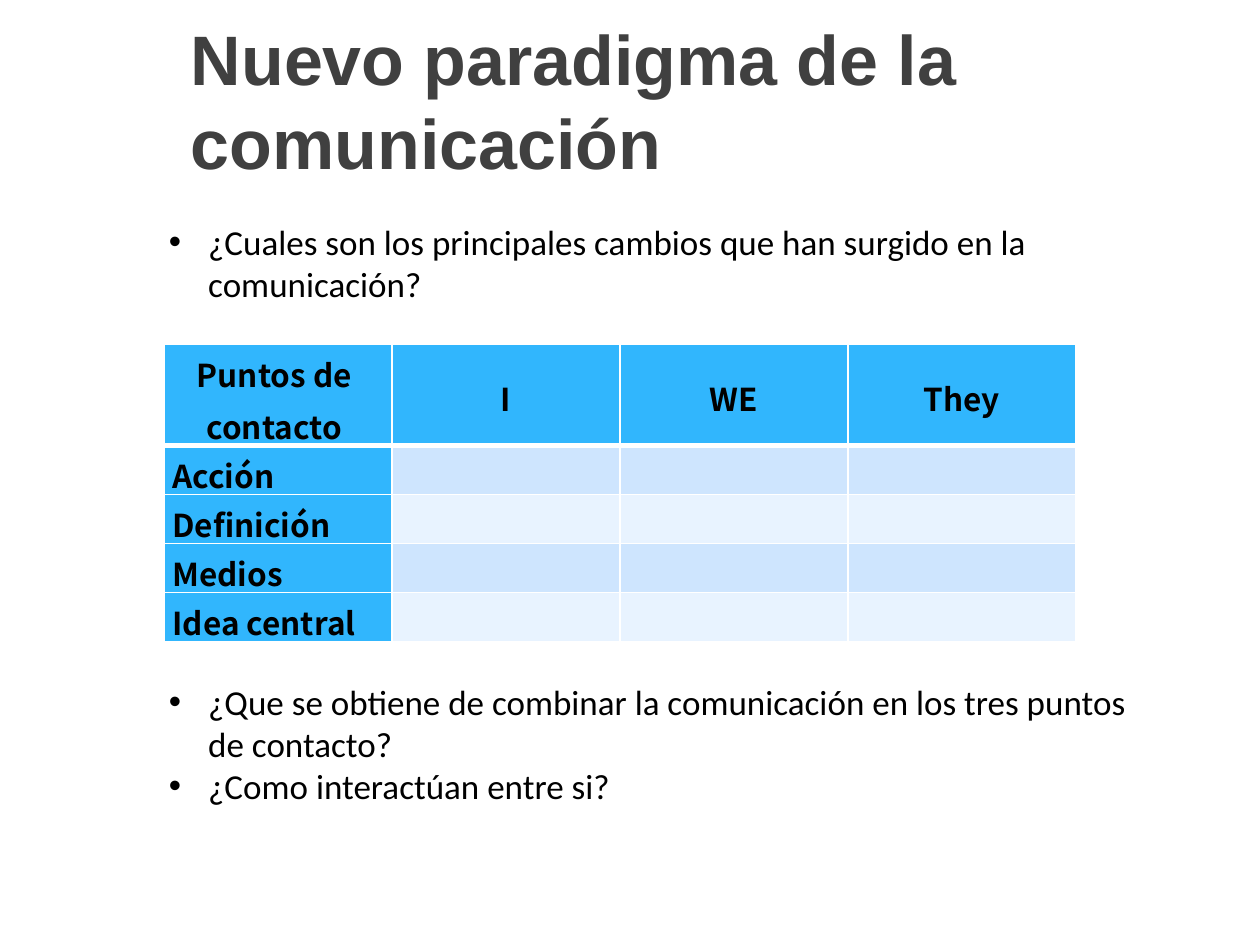
from lxml.etree import SubElement as Sub
from pptx import Presentation as Deck
from pptx.dml.color import RGBColor as Rgb
from pptx.enum.text import MSO_ANCHOR as Anchor, PP_ALIGN as Align
from pptx.oxml.ns import qn
from pptx.util import Pt

WHITE = Rgb(0xFF, 0xFF, 0xFF)
BLACK = Rgb(0, 0, 0)
GREY = Rgb(0x40, 0x40, 0x40)
BLUE = Rgb(0x31, 0xB6, 0xFD)
BANDS = Rgb(0xCE, 0xE5, 0xFE), Rgb(0xE8, 0xF3, 0xFF)

TITLE = ["Nuevo paradigma de la ", "comunicación"]
ASKS = [
    ("¿Cuales son los principales cambios que han surgido en la comunicación?", 0),
    ("¿Que se obtiene de combinar la comunicación en los tres puntos de contacto?", 215),
    ("¿Como interactúan entre si?", 0),
]
HEADS = ["Puntos de \ncontacto ", "I", "WE", "They"]
ROWS = ["Acción", "Definición", "Medios", "Idea central"]


def add_run(para, text, face, size, color, bold=False):
    """Add one styled run to a paragraph."""
    run = para.add_run()
    run.text = text
    font = run.font
    font.name, font.size, font.bold = face, Pt(size), bold
    font.color.rgb = color


def add_box(slide, left, top, width, height):
    """Add a wrapping text box and return its frame."""
    box = slide.shapes.add_textbox(Pt(left), Pt(top), Pt(width), Pt(height))
    box.text_frame.word_wrap = True
    return box.text_frame


def add_title(slide, left, top, width, height):
    """Place the two-line title."""
    frame = add_box(slide, left, top, width, height)
    frame.vertical_anchor = Anchor.MIDDLE
    para = frame.paragraphs[0]
    para.line_spacing = Pt(48)
    for i, line in enumerate(TITLE):
        if i:
            para.add_line_break()
        add_run(para, line, "Arial", 40, GREY, True)


def add_asks(slide, left, top, width, height):
    """Place the bulleted questions, leaving room for the table."""
    frame = add_box(slide, left, top, width, height)
    frame.margin_left = Pt(31)
    for i, (text, gap) in enumerate(ASKS):
        para = frame.add_paragraph() if i else frame.paragraphs[0]
        props = para._p.get_or_add_pPr()
        props.set("marL", str(Pt(22.5)))
        props.set("indent", str(-Pt(22.5)))
        if gap:
            para.space_before = Pt(gap)
        Sub(props, qn("a:buFont"), typeface="Arial")
        Sub(props, qn("a:buChar"), char="•")
        add_run(para, text, "Calibri", 20, BLACK)


def set_edges(cell, base):
    """Draw white borders, with the given width at the bottom."""
    props = cell._tc.get_or_add_tcPr()
    for side, width in zip("LRTB", (1, 1, 1, base)):
        line = Sub(props, qn("a:ln" + side), w=str(Pt(width)))
        fill = Sub(line, qn("a:solidFill"))
        Sub(fill, qn("a:srgbClr"), val=str(WHITE))


def fill_cell(cell, text, color, head):
    """Style one cell and write its lines."""
    set_edges(cell, 3 if head else 1)
    cell.fill.solid()
    cell.fill.fore_color.rgb = color
    cell.margin_left = cell.margin_right = Pt(5)
    cell.margin_top = cell.margin_bottom = 0
    cell.vertical_anchor = Anchor.MIDDLE if head else Anchor.TOP
    if not text:
        return
    frame = cell.text_frame
    for i, line in enumerate(text.split("\n")):
        para = frame.add_paragraph() if i else frame.paragraphs[0]
        para.alignment = Align.CENTER if head else Align.LEFT
        para.line_spacing = 1.15
        add_run(para, line, "Noto Sans CJK KR", 18, BLACK, True)


def add_grid(slide, left, top, width, height):
    """Place the table of contact points."""
    grid = [HEADS] + [[name, "", "", ""] for name in ROWS]
    table = slide.shapes.add_table(
        len(grid), len(HEADS), Pt(left), Pt(top), Pt(width), Pt(height)).table
    for col in table.columns:
        col.width = Pt(width / len(HEADS))
    first = 58
    for r, texts in enumerate(grid):
        table.rows[r].height = Pt((height - first) / len(ROWS) if r else first)
        for c, text in enumerate(texts):
            color = BANDS[(r - 1) % 2] if r and c else BLUE
            fill_cell(table.cell(r, c), text, color, r == 0)


def main():
    """Build and save the slide."""
    deck = Deck()
    deck.slide_width, deck.slide_height = Pt(720), Pt(540)
    slide = deck.slides.add_slide(deck.slide_layouts[6])
    add_title(slide, 102, 15, 564, 84)
    add_asks(slide, 65.5, 122.5, 590.5, 357)
    add_grid(slide, 93.6, 196.6, 521.2, 170)
    deck.save("out.pptx")


if __name__ == "__main__":
    main()
